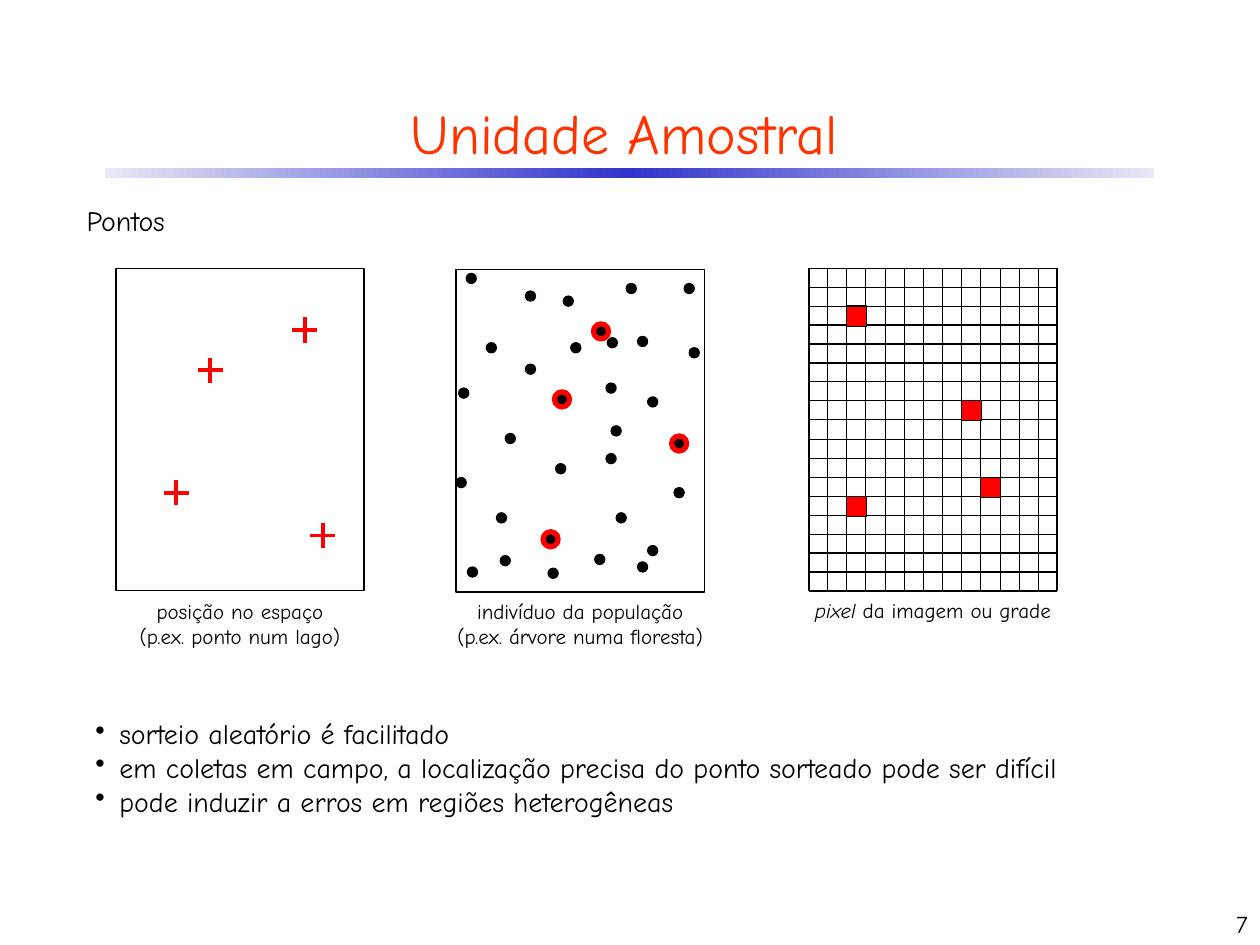
"""Build the slide on point sampling units with three sampling diagrams."""
from copy import deepcopy
from dataclasses import dataclass
from typing import NamedTuple

from lxml import etree
from pptx import Presentation
from pptx import util as u
from pptx.dml.color import RGBColor
from pptx.enum import shapes, text
from pptx.oxml import ns

PX = 9144


@dataclass(frozen=True)
class Theme:
    font: str = "Comic Neue"
    ink: str = "000000"
    accent: str = "FF0000"
    title: str = "FF3300"
    bar: tuple = ("E8E8F6", "3333CC", "E8E8F6")
    title_size: int = 32
    body_size: int = 16
    number_size: int = 14
    caption_size: int = 12
    thin: float = 0.75
    cross: float = 2.25
    ring: float = 3


class Box(NamedTuple):
    left: int
    top: int
    width: int
    height: int


class Point(NamedTuple):
    x: int
    y: int


@dataclass(frozen=True)
class Label:
    box: Box
    paragraphs: tuple
    size: int
    color: str = "000000"
    align: text.PP_ALIGN = text.PP_ALIGN.LEFT
    anchor: text.MSO_ANCHOR = text.MSO_ANCHOR.TOP
    wrap: bool = True
    bullet: str = ""
    italic_start: str = ""


THEME = Theme()
CENTER = text.PP_ALIGN.CENTER
RECTANGLE = shapes.MSO_SHAPE.RECTANGLE
OVAL = shapes.MSO_SHAPE.OVAL

BAR = Box(83, 133, 833, 8)
LAKE = Box(92, 213, 197, 256)
FOREST = Box(362, 214, 197, 256)
GRID = Box(642, 213, 197, 256)
COLUMNS, ROWS = 13, 17
CELL, DOT, RING, ARM = 16, 8, 12, 10

CROSSES = [Point(242, 262), Point(140, 391), Point(256, 425), Point(167, 294)]
SAMPLED_TREES = [Point(442, 313), Point(433, 424), Point(535, 348), Point(473, 259)]
OTHER_TREES = [Point(*pair) for pair in (
    (386, 272), (417, 289), (401, 344), (441, 368), (394, 407), (472, 440), (489, 407),
    (506, 446), (514, 433), (485, 338), (481, 360), (535, 387), (514, 315), (453, 272),
    (506, 267), (481, 304), (364, 308), (362, 379), (397, 441), (371, 450), (435, 451),
    (543, 225), (447, 235), (482, 268), (370, 217), (417, 231), (497, 225), (547, 276))]
SAMPLED_CELLS = [(2, 2), (8, 7), (9, 11), (2, 12)]

LABELS = [
    Label(Box(33, 67, 925, 75), ("Unidade Amostral",), THEME.title_size, THEME.title,
          CENTER, text.MSO_ANCHOR.MIDDLE),
    Label(Box(59, 157, 894, 37), ("Pontos",), THEME.body_size),
    Label(Box(792, 700, 208, 50), ("7",), THEME.number_size,
          align=text.PP_ALIGN.RIGHT, anchor=text.MSO_ANCHOR.BOTTOM),
    Label(Box(96, 470, 189, 50), ("posição no espaço", "(p.ex. ponto num lago)"),
          THEME.caption_size, align=CENTER, wrap=False),
    Label(Box(341, 470, 239, 50), ("indivíduo da população", "(p.ex. árvore numa floresta)"),
          THEME.caption_size, align=CENTER, wrap=False),
    Label(Box(632, 469, 217, 30), (" da imagem ou grade",), THEME.caption_size,
          align=CENTER, wrap=False, italic_start="pixel"),
    Label(Box(66, 564, 894, 91),
          ("sorteio aleatório é facilitado",
           "em coletas em campo, a localização precisa do ponto sorteado pode ser difícil",
           "pode induzir a erros em regiões heterogêneas"),
          THEME.body_size, bullet="•"),
]


def emu(*lengths: int) -> list[int]:
    return [round(length * PX) for length in lengths]


def add_outline(slide, kind, box: Box, fill: str = "", line: str = THEME.ink,
                width: float = THEME.thin):
    shape = slide.shapes.add_shape(kind, *emu(*box))
    shape.shadow.inherit = False
    if fill:
        shape.fill.solid()
        shape.fill.fore_color.rgb = RGBColor.from_string(fill)
    else:
        shape.fill.background()
    shape.line.color.rgb = RGBColor.from_string(line)
    shape.line.width = u.Pt(width)
    return shape


def add_line(slide, start: Point, end: Point, color: str, width: float) -> None:
    connector = slide.shapes.add_connector(
        shapes.MSO_CONNECTOR.STRAIGHT, *emu(*start, *end))
    connector.line.color.rgb = RGBColor.from_string(color)
    connector.line.width = u.Pt(width)
    etree.SubElement(connector._element.spPr, ns.qn("a:effectLst"))


def add_bar(slide) -> None:
    bar = add_outline(slide, RECTANGLE, BAR)
    bar.line.fill.background()
    bar.fill.gradient()
    bar.fill.gradient_angle = 0
    stop_list = bar._element.spPr.find(".//" + ns.qn("a:gsLst"))
    stop_list.append(deepcopy(stop_list[0]))
    for index, (stop, color) in enumerate(zip(bar.fill.gradient_stops, THEME.bar)):
        stop.position = index / 2
        stop.color.rgb = RGBColor.from_string(color)


def add_bullet(paragraph, character: str) -> None:
    properties = paragraph._p.get_or_add_pPr()
    indent = emu(19)[0]
    properties.set("marL", str(indent))
    properties.set("indent", str(-indent))
    bullet = etree.Element(ns.qn("a:buChar"), char=character)
    properties.insert(0, bullet)


def add_label(slide, label: Label) -> None:
    frame = slide.shapes.add_textbox(*emu(*label.box)).text_frame
    frame.word_wrap = label.wrap
    frame.vertical_anchor = label.anchor
    for index, words in enumerate(label.paragraphs):
        paragraph = frame.add_paragraph() if index else frame.paragraphs[0]
        paragraph.alignment = label.align
        paragraph.font.name = THEME.font
        paragraph.font.size = u.Pt(label.size)
        paragraph.font.color.rgb = RGBColor.from_string(label.color)
        if label.italic_start:
            start = paragraph.add_run()
            start.text = label.italic_start
            start.font.italic = True
        paragraph.add_run().text = words
        if label.bullet:
            add_bullet(paragraph, label.bullet)


def add_lake(slide) -> None:
    add_outline(slide, RECTANGLE, LAKE)
    for x, y in CROSSES:
        add_line(slide, Point(x, y - ARM), Point(x, y + ARM), THEME.accent, THEME.cross)
        add_line(slide, Point(x - ARM, y), Point(x + ARM, y), THEME.accent, THEME.cross)


def add_forest(slide) -> None:
    add_outline(slide, RECTANGLE, FOREST)
    for x, y in OTHER_TREES + SAMPLED_TREES:
        add_outline(slide, OVAL, Box(x, y, DOT, DOT), THEME.ink)
    inset = (RING - DOT) // 2
    for x, y in SAMPLED_TREES:
        add_outline(slide, OVAL, Box(x - inset, y - inset, RING, RING),
                    line=THEME.accent, width=THEME.ring)


def add_grid(slide) -> None:
    xs = [GRID.left + round(GRID.width * i / COLUMNS) for i in range(COLUMNS + 1)]
    ys = [GRID.top + round(GRID.height * i / ROWS) for i in range(ROWS + 1)]
    for y in ys:
        add_line(slide, Point(xs[0], y), Point(xs[-1], y), THEME.ink, THEME.thin)
    for x in xs:
        add_line(slide, Point(x, ys[0]), Point(x, ys[-1]), THEME.ink, THEME.thin)
    for column, row in SAMPLED_CELLS:
        add_outline(slide, RECTANGLE, Box(xs[column], ys[row], CELL, CELL), THEME.accent)


def main() -> None:
    presentation = Presentation()
    presentation.slide_width, presentation.slide_height = emu(1000, 750)
    slide = presentation.slides.add_slide(presentation.slide_layouts[6])
    add_bar(slide)
    add_lake(slide)
    add_forest(slide)
    add_grid(slide)
    for label in LABELS:
        add_label(slide, label)
    presentation.save("out.pptx")


if __name__ == "__main__":
    main()
